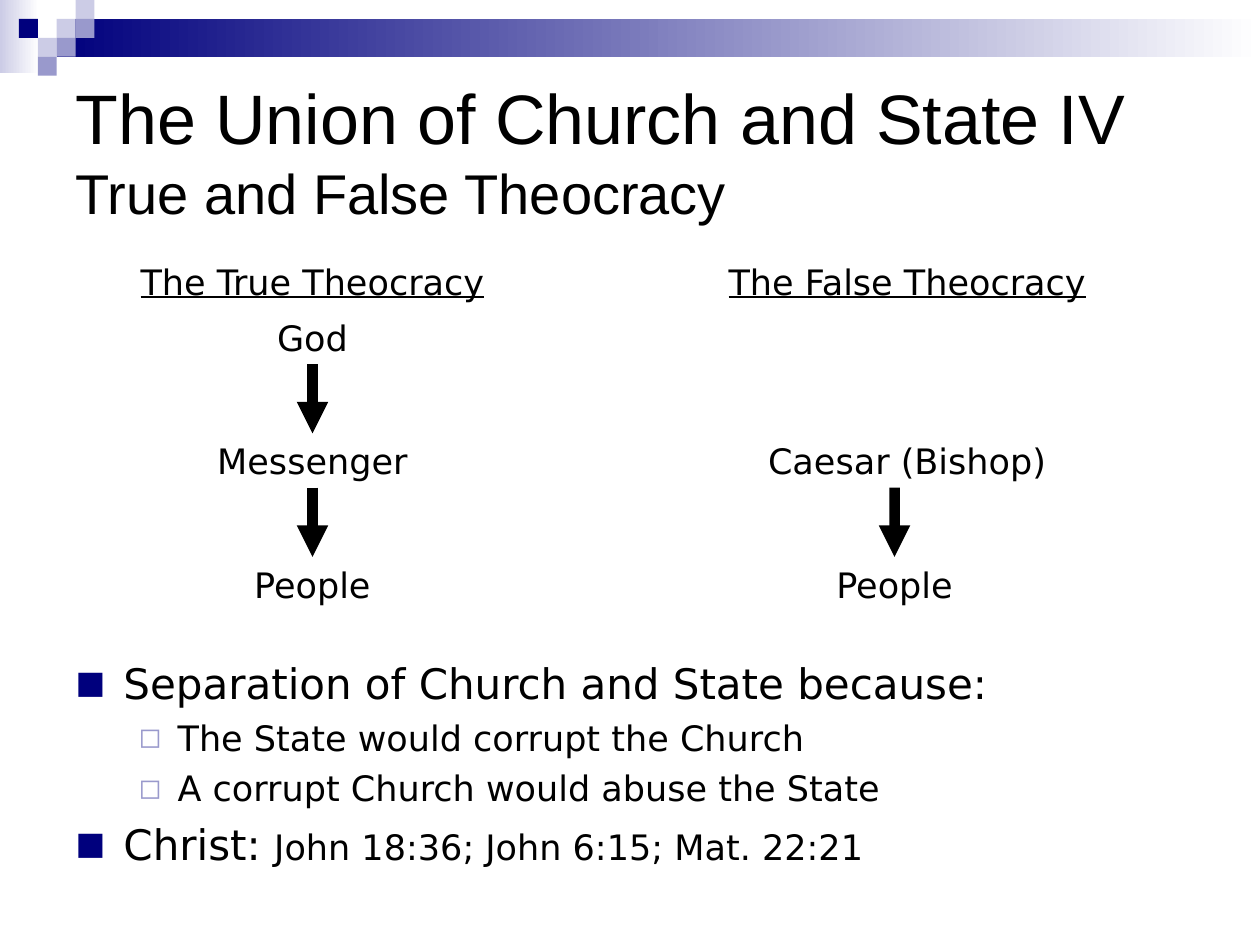
import pptx
import pptx.util
import pptx.dml.color
import pptx.enum.shapes
import pptx.enum.text
import pptx.oxml
import pptx.oxml.ns
from lxml import etree

Inches, Pt = pptx.util.Inches, pptx.util.Pt
RGB = pptx.dml.color.RGBColor.from_string
TEXT = pptx.enum.text
RECT = pptx.enum.shapes.MSO_SHAPE.RECTANGLE
LINE = pptx.enum.shapes.MSO_CONNECTOR.STRAIGHT

THEME = {
    "navy": "00007D", "mid": "9999CC", "pale": "CCCCE6",
    "white": "FFFFFF", "black": "000000",
    "head": "Arial", "text": "DejaVu Sans",
    "title": 40, "sub": 32, "main": 24, "small": 20,
}

TITLE = [("The Union of Church and State IV", "title"),
         ("True and False Theocracy", "sub")]
# level, runs of (text, size)
POINTS = [
    (0, [("Separation of Church and State because:", "main")]),
    (1, [("The State would corrupt the Church", "small")]),
    (1, [("A corrupt Church would abuse the State", "small")]),
    (0, [("Christ: ", "main"),
         ("John 18:36; John 6:15; Mat. 22:21", "small")]),
]
# margin, hanging indent, mark, colour, size in percent, space before
LEVELS = [(0.38, 0.38, "■", "navy", 75, 5.6),
          (0.81, 0.31, "◻", "mid", 80, 4.7)]
# text, centre, width
HEADS = [("The True Theocracy", 2.48, 3.15),
         ("The False Theocracy", 7.2, 3.62)]
# row, text, centre, width
CHAINS = [
    [(0, "God", 2.48, 1.49), (1, "Messenger", 2.48, 1.97),
     (2, "People", 2.48, 1.97)],
    [(1, "Caesar (Bishop)", 7.2, 2.44), (2, "People", 7.1, 1.97)],
]
HEAD_TOP, ROW_TOP, PITCH, HIGH = 2.02, 2.46, 0.98, 0.43

BANDS = [((0, 0, 0.31, 0.58), "pale"), ((0.45, 0.15, 9.55, 0.3), "navy")]
UNIT = 0.15
# column, row, colour
TILES = [(3, 1, "pale"), (4, 0, "pale"), (4, 1, "mid"), (2, 2, "pale"),
         (1, 1, "navy"), (3, 2, "mid"), (2, 3, "mid")]


def color(name):
    return RGB(THEME[name])


def add_run(para, text, size, face="text"):
    run = para.add_run()
    run.text = text
    run.font.name = THEME[face]
    run.font.size = Pt(THEME[size])
    run.font.color.rgb = color("black")
    return run


def place(shape, left, top, width, height):
    shape.left, shape.top = Inches(left), Inches(top)
    shape.width, shape.height = Inches(width), Inches(height)


def add_rect(slide, box, tone, fade=False):
    shape = slide.shapes.add_shape(RECT, *map(Inches, box))
    shape.shadow.inherit = False
    shape.line.fill.background()
    if fade:
        shape.fill.gradient()
        shape.fill.gradient_angle = 0
        for stop, name in zip(shape.fill.gradient_stops, (tone, "white")):
            stop.color.rgb = color(name)
    else:
        shape.fill.solid()
        shape.fill.fore_color.rgb = color(tone)


def add_label(slide, text, mid, top, width, under=False):
    box = slide.shapes.add_textbox(Inches(mid - width / 2), Inches(top),
                                   Inches(width), Inches(HIGH))
    frame = box.text_frame
    frame.word_wrap = True
    frame.auto_size = TEXT.MSO_AUTO_SIZE.SHAPE_TO_FIT_TEXT
    para = frame.paragraphs[0]
    para.alignment = TEXT.PP_ALIGN.CENTER
    run = add_run(para, text, "small")
    if under:
        run.font.underline = True
    return box


def add_arrow(slide, upper, lower, mid, start, end, joined):
    """Point from upper to lower; join the start only if the centres agree."""
    line = slide.shapes.add_connector(LINE, Inches(mid), Inches(start),
                                      Inches(mid), Inches(end))
    if joined:
        line.begin_connect(upper, 2)
    line.end_connect(lower, 0)
    line.line.color.rgb = color("black")
    line.line.width = Pt(6)
    tag = pptx.oxml.ns.qn
    tail = etree.SubElement(line.line._get_or_add_ln(), tag("a:tailEnd"))
    tail.set("type", "triangle")
    etree.SubElement(line._element.spPr, tag("a:effectLst"))


def add_bullet(para, level):
    margin, hang, mark, tone, size, gap = LEVELS[level]
    para.level = level
    para.space_before = Pt(gap)
    props = para._p.get_or_add_pPr()
    props.set("marL", str(Inches(margin)))
    props.set("indent", str(-Inches(hang)))
    space = pptx.oxml.ns.nsdecls("a")
    for xml in (
        f'<a:buClr {space}><a:srgbClr val="{THEME[tone]}"/></a:buClr>',
        f'<a:buSzPct {space} val="{size * 1000}"/>',
        f'<a:buFont {space} typeface="{THEME["text"]}"/>',
        f'<a:buChar {space} char="{mark}"/>',
    ):
        props.append(pptx.oxml.parse_xml(xml))


def fill_title(shape):
    place(shape, 0.5, 0.44, 9, 1.5)
    frame = shape.text_frame
    frame.auto_size = TEXT.MSO_AUTO_SIZE.NONE
    frame.vertical_anchor = TEXT.MSO_ANCHOR.MIDDLE
    para = frame.paragraphs[0]
    para.alignment = TEXT.PP_ALIGN.LEFT
    for i, (text, size) in enumerate(TITLE):
        if i:
            para.add_line_break()
        add_run(para, text, size, "head")


def fill_body(shape):
    place(shape, 0.5, 5.17, 9, 1.89)
    frame = shape.text_frame
    frame.auto_size = TEXT.MSO_AUTO_SIZE.NONE
    for i, (level, runs) in enumerate(POINTS):
        para = frame.add_paragraph() if i else frame.paragraphs[0]
        add_bullet(para, level)
        for text, size in runs:
            add_run(para, text, size)


def add_chain(slide, chain):
    last = None
    for row, text, mid, width in chain:
        top = ROW_TOP + row * PITCH
        box = add_label(slide, text, mid, top, width)
        if last:
            upper, centre = last
            add_arrow(slide, upper, box, mid, top - PITCH + HIGH, top,
                      centre == mid)
        last = box, mid


def main():
    deck = pptx.Presentation()
    deck.slide_width, deck.slide_height = Inches(10), Inches(7.5)
    slide = deck.slides.add_slide(deck.slide_layouts[1])
    for box, tone in BANDS:
        add_rect(slide, box, tone, fade=True)
    for col, row, tone in TILES:
        add_rect(slide, (col * UNIT, row * UNIT, UNIT, UNIT), tone)
    fill_title(slide.shapes.title)
    fill_body(slide.placeholders[1])
    for text, mid, width in HEADS:
        add_label(slide, text, mid, HEAD_TOP, width, under=True)
    for chain in CHAINS:
        add_chain(slide, chain)
    deck.save("out.pptx")


if __name__ == "__main__":
    main()
